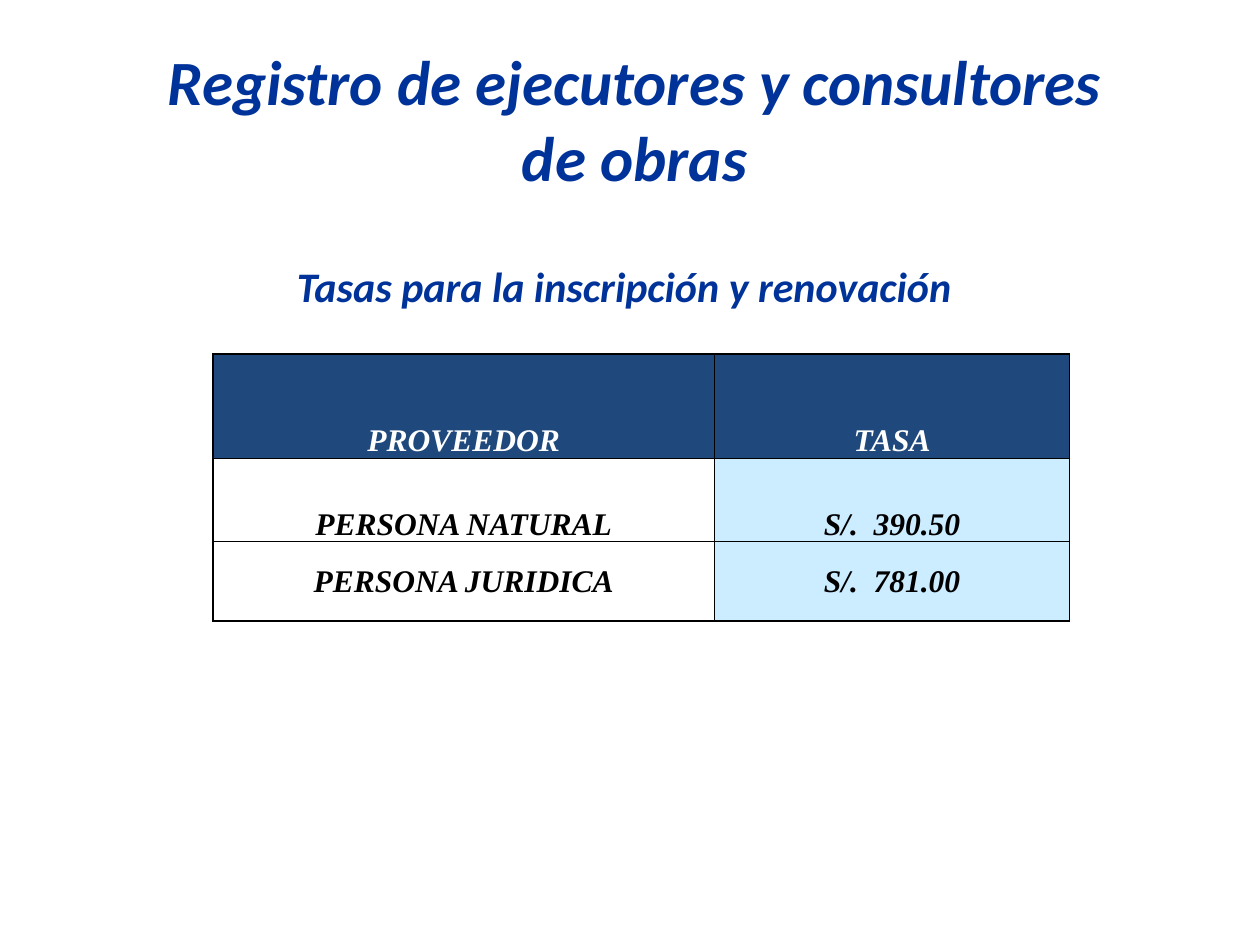
"""Build the slide with the registration fees for builders and consultants."""
from lxml import etree
from pptx import Presentation
from pptx.dml.color import RGBColor
from pptx.enum import text as t
from pptx.oxml import ns
from pptx.util import Inches, Pt

BLUE = RGBColor(0x00, 0x33, 0x99)
NAVY = RGBColor(0x1F, 0x49, 0x7D)
SKY = RGBColor(0xCC, 0xEC, 0xFF)
WHITE = RGBColor(0xFF, 0xFF, 0xFF)
BLACK = RGBColor(0x00, 0x00, 0x00)

COLS = (3.98, 2.82)
ROWS = (0.83, 0.66, 0.63)
FEES = (
    ("PROVEEDOR", "TASA"),
    ("PERSONA NATURAL", "S/.  390.50"),
    ("PERSONA JURIDICA", "S/.  781.00"),
)


def write(frame, words, size=18, font="Times New Roman", color=BLACK):
    """Put centred bold italic text into a text frame."""
    frame.word_wrap = True
    par = frame.paragraphs[0]
    par.alignment = t.PP_ALIGN.CENTER
    run = par.add_run()
    run.text = words
    run.font.size = Pt(size)
    run.font.name = font
    run.font.bold = run.font.italic = True
    run.font.color.rgb = color


def place(shape, left, top, width, height):
    """Move and size a shape, given inches."""
    shape.left, shape.top = Inches(left), Inches(top)
    shape.width, shape.height = Inches(width), Inches(height)


def add_head(slide, words):
    """Fill the title placeholder."""
    head = slide.shapes.title
    place(head, 1.09, 0.31, 7.89, 1.26)
    head.text_frame.vertical_anchor = t.MSO_ANCHOR.MIDDLE
    write(head.text_frame, words, size=36, font="Calibri", color=BLUE)


def add_label(slide, words):
    """Add the line above the table."""
    box = slide.shapes.add_textbox(
        Inches(1.09), Inches(2.02), Inches(7.73), Inches(0.5))
    box.text_frame.vertical_anchor = t.MSO_ANCHOR.MIDDLE
    write(box.text_frame, words, size=24, font="Calibri", color=BLUE)


def edge(cell):
    """Draw a thin black line on each side of a cell."""
    props = cell._tc.get_or_add_tcPr()
    for spot, side in enumerate(("lnL", "lnR", "lnT", "lnB")):
        line = etree.Element(ns.qn(f"a:{side}"), w=str(Pt(1)))
        fill = etree.SubElement(line, ns.qn("a:solidFill"))
        etree.SubElement(fill, ns.qn("a:srgbClr"), val=str(BLACK))
        props.insert(spot, line)


def style(cell, fill, anchor):
    """Set the fill, margins, anchor and border of a cell."""
    cell.fill.solid()
    cell.fill.fore_color.rgb = fill
    cell.margin_left = cell.margin_right = cell.margin_top = Inches(0.01)
    cell.margin_bottom = 0
    cell.vertical_anchor = anchor
    edge(cell)


def add_fees(slide):
    """Add the table of fees."""
    grid = slide.shapes.add_table(
        len(ROWS), len(COLS), Inches(1.69), Inches(2.81),
        Inches(sum(COLS)), Inches(sum(ROWS))).table
    for col, width in zip(grid.columns, COLS):
        col.width = Inches(width)
    for row, height in zip(grid.rows, ROWS):
        row.height = Inches(height)
    last = len(FEES) - 1
    for r, row in enumerate(FEES):
        anchor = t.MSO_ANCHOR.MIDDLE if r == last else t.MSO_ANCHOR.BOTTOM
        fills = (WHITE, SKY) if r else (NAVY, NAVY)
        for c, words in enumerate(row):
            cell = grid.cell(r, c)
            style(cell, fills[c], anchor)
            write(cell.text_frame, words, color=BLACK if r else WHITE)
    grid.cell(last, 1).text_frame.paragraphs[0].space_before = Pt(3.6)


def main():
    """Build and save the slide."""
    deck = Presentation()
    deck.slide_width, deck.slide_height = Inches(10), Inches(7.5)
    slide = deck.slides.add_slide(deck.slide_layouts[5])
    add_label(slide, "Tasas para la inscripción y renovación")
    add_fees(slide)
    add_head(slide, "Registro de ejecutores y consultores de obras")
    deck.save("out.pptx")


if __name__ == "__main__":
    main()
